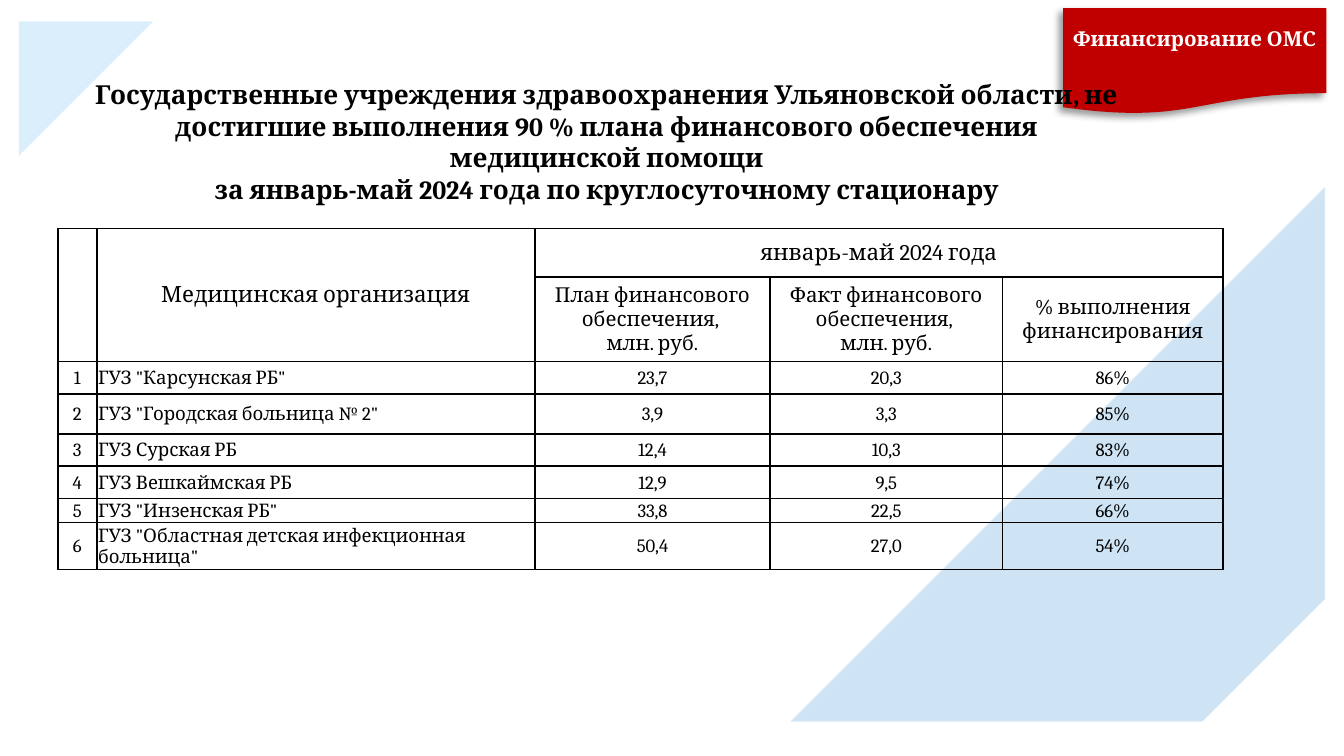
from lxml import etree
from pptx import Presentation, util as u
from pptx.dml.color import RGBColor
from pptx.enum import shapes, text
from pptx.oxml import parse_xml
from pptx.oxml.ns import nsdecls, qn

# Content
TITLE = ["Государственные учреждения здравоохранения Ульяновской области, "
         "не достигшие выполнения 90 % плана финансового обеспечения медицинской помощи",
         "за январь-май 2024 года по круглосуточному стационару"]
BANNER = ["Финансирование ОМС"]
NAME_HEAD, PERIOD = ["Медицинская организация"], ["январь-май 2024 года"]
SUBHEADS = [["План финансового обеспечения, ", "млн. руб."],
            ["Факт финансового обеспечения, ", "млн. руб."],
            ["% выполнения", "финансирования"]]
ROWS = [
    ('ГУЗ "Карсунская РБ"', "23,7", "20,3", "86%"),
    ('ГУЗ "Городская больница № 2"', "3,9", "3,3", "85%"),
    ("ГУЗ Сурская РБ", "12,4", "10,3", "83%"),
    ("ГУЗ Вешкаймская РБ", "12,9", "9,5", "74%"),
    ('ГУЗ "Инзенская РБ"', "33,8", "22,5", "66%"),
    ('ГУЗ "Областная детская инфекционная больница"', "50,4", "27,0", "54%"),
]
COLS = [0.29, 3.26, 1.75, 1.73, 1.64]
HEIGHTS = [0.36, 0.63, 0.24, 0.3, 0.24, 0.24, 0.18, 0.35]
C = {"red": "C00000", "blue": "0D79CA", "sky": "4FADF3", "white": "FFFFFF", "black": "000000"}
# left, top, side, rotation, fill, opacity in %, outlined
TRIANGLES = [(5.88, 1.39, 3.98, 270, "blue", 20, True),
             (8.86, 4.47, 1, 270, "white", 100, True),
             (0.14, 0.16, 1, 90, "sky", 20, False)]


def rgb(name):
    return RGBColor.from_string(C[name])


def write(tf, lines, size, color="black", bold=False, align=text.PP_ALIGN.CENTER):
    for i, line in enumerate(lines):
        p = tf.paragraphs[0] if i == 0 else tf.add_paragraph()
        p.alignment = align
        r = p.add_run()
        r.text = line
        r.font.name, r.font.size, r.font.bold = "Cambria", u.Pt(size), bold
        r.font.color.rgb = rgb(color)


def set_margins(box, left, top, right, bottom):
    box.margin_left, box.margin_top = u.Inches(left), u.Inches(top)
    box.margin_right, box.margin_bottom = u.Inches(right), u.Inches(bottom)


def add_shape(kind, left, top, width, height, fill):
    sp = s.shapes.add_shape(kind, *map(u.Inches, (left, top, width, height)))
    sp.shadow.inherit = False
    sp.fill.solid()
    sp.fill.fore_color.rgb = rgb(fill)
    sp.line.fill.background()
    return sp


def add_borders(cell):
    tcPr = cell._tc.get_or_add_tcPr()
    for i, side in enumerate(("lnL", "lnR", "lnT", "lnB")):
        tcPr.insert(i, parse_xml(
            f'<a:{side} {nsdecls("a")} w="12700"><a:solidFill>'
            f'<a:srgbClr val="{C["black"]}"/></a:solidFill></a:{side}>'))


# Widescreen page, 16 to 9
prs = Presentation()
prs.slide_width, prs.slide_height = u.Inches(10), u.Inches(10 * 9 / 16)
s = prs.slides.add_slide(prs.slide_layouts[5])

# Banner with a soft shadow
sp = add_shape(shapes.MSO_SHAPE.FLOWCHART_DOCUMENT, 7.91, 0.06, 1.96, 0.79, "red")
sp._element.spPr.find(qn("a:effectLst")).append(parse_xml(
    f'<a:outerShdw {nsdecls("a")} blurRad="50800" dist="38100" dir="8100000">'
    f'<a:srgbClr val="{C["black"]}"><a:alpha val="40000"/></a:srgbClr></a:outerShdw>'))
tf = sp.text_frame
tf.word_wrap = False
tf.vertical_anchor = text.MSO_ANCHOR.MIDDLE
set_margins(tf, 0.07, 0.03, 0.07, 0.21)
write(tf, BANNER, 11, "white", bold=True)

# Corner triangles
for left, top, side, rotation, fill, opacity, outlined in TRIANGLES:
    sp = add_shape(shapes.MSO_SHAPE.RIGHT_TRIANGLE, left, top, side, side, fill)
    sp.rotation = rotation
    if outlined:
        sp.line.color.rgb = rgb("white")
        sp.line.width = u.Pt(1.25)
    if opacity < 100:
        for color in sp._element.spPr.iter(qn("a:srgbClr")):
            etree.SubElement(color, qn("a:alpha")).set("val", str(opacity * 1000))

# Title, in front of the banner
title = s.shapes.title
title.left, title.top, title.width, title.height = map(u.Inches, (0.54, 0.62, 7.95, 1.18))
s.shapes._spTree.append(title._element)
tf = title.text_frame
tf.word_wrap = True
tf.auto_size = text.MSO_AUTO_SIZE.NONE
tf.vertical_anchor = text.MSO_ANCHOR.BOTTOM
set_margins(tf, 0.1, 0.05, 0.1, 0.28)
write(tf, TITLE, 14, bold=True)

# Table
table = s.shapes.add_table(len(HEIGHTS), len(COLS), u.Inches(0.43), u.Inches(1.7),
                           u.Inches(sum(COLS)), u.Inches(sum(HEIGHTS))).table
table.first_row = table.horz_banding = False
for col, width in zip(table.columns, COLS):
    col.width = u.Inches(width)
for row, height in zip(table.rows, HEIGHTS):
    row.height = u.Inches(height)
for cell in table.iter_cells():
    cell.fill.background()
    cell.vertical_anchor = text.MSO_ANCHOR.MIDDLE
    set_margins(cell, 0.01, 0.01, 0.01, 0)
    add_borders(cell)
for first, last in [((0, 0), (1, 0)), ((0, 1), (1, 1)), ((0, 2), (0, 4))]:
    table.cell(*first).merge(table.cell(*last))

write(table.cell(0, 1).text_frame, NAME_HEAD, 12)
write(table.cell(0, 2).text_frame, PERIOD, 12)
for c, lines in enumerate(SUBHEADS, 2):
    write(table.cell(1, c).text_frame, lines, 11)
for n, row in enumerate(ROWS, 1):
    for c, value in enumerate((str(n), *row)):
        align = text.PP_ALIGN.LEFT if c == 1 else text.PP_ALIGN.CENTER
        write(table.cell(n + 1, c).text_frame, [value], 10, align=align)

prs.save("out.pptx")
